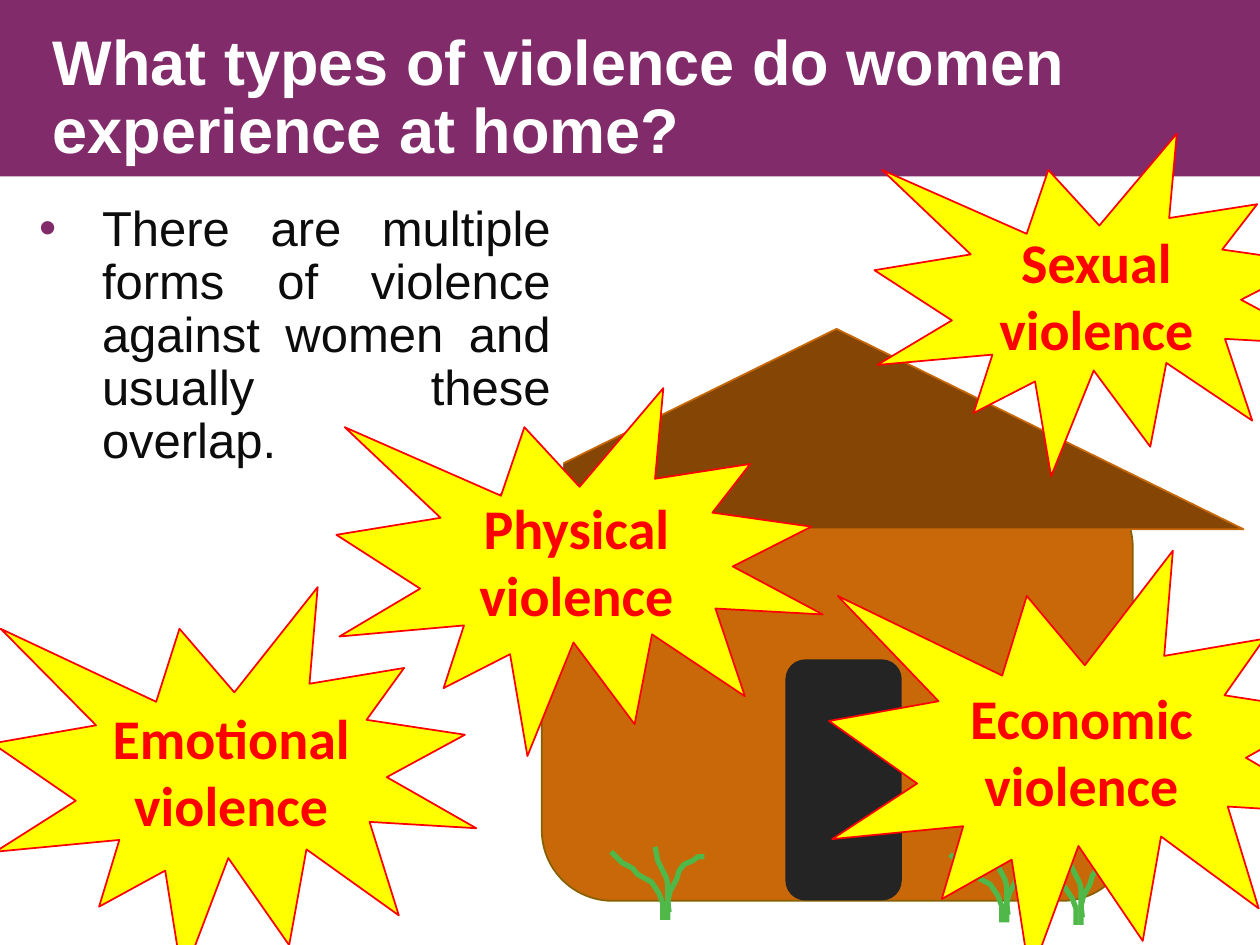
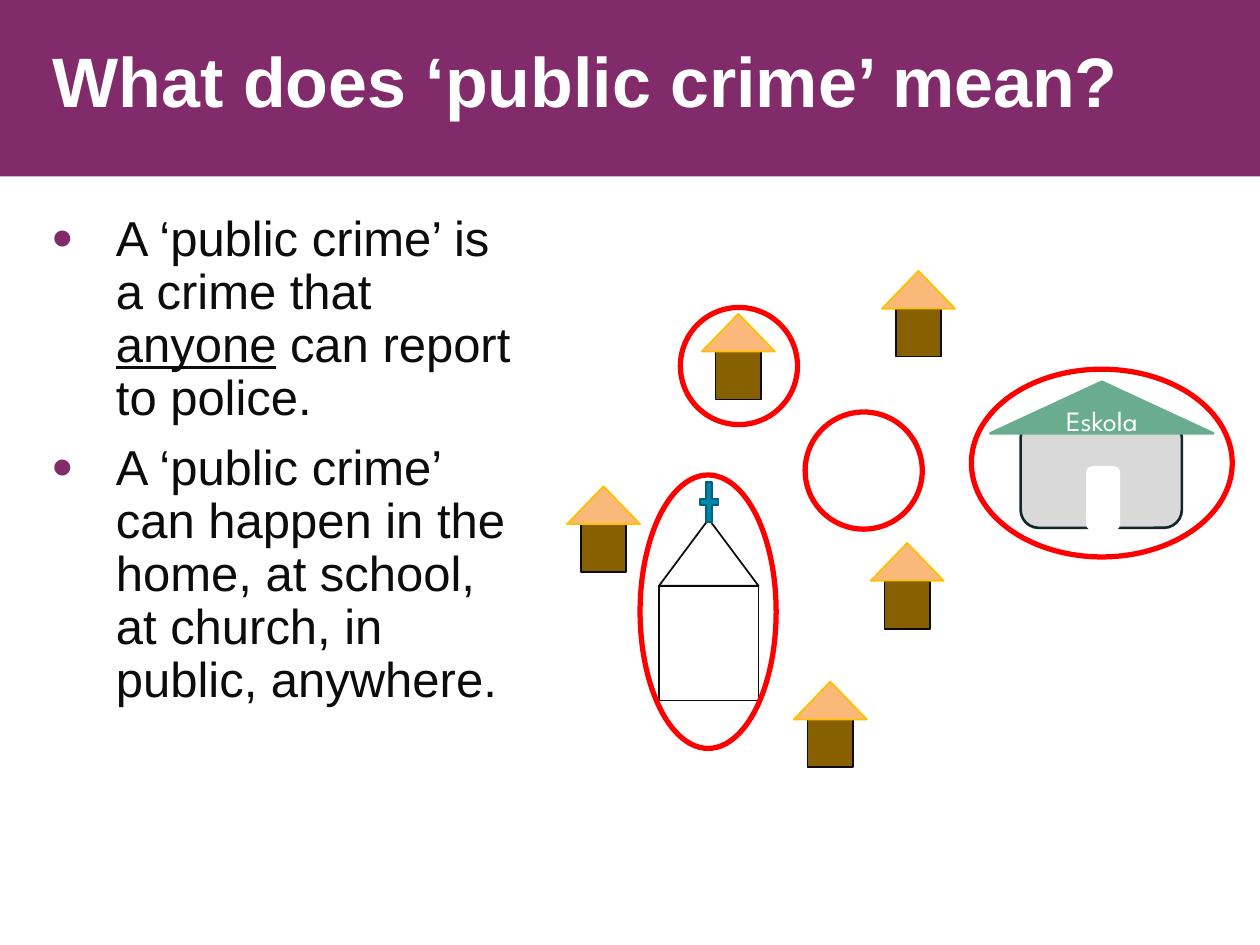
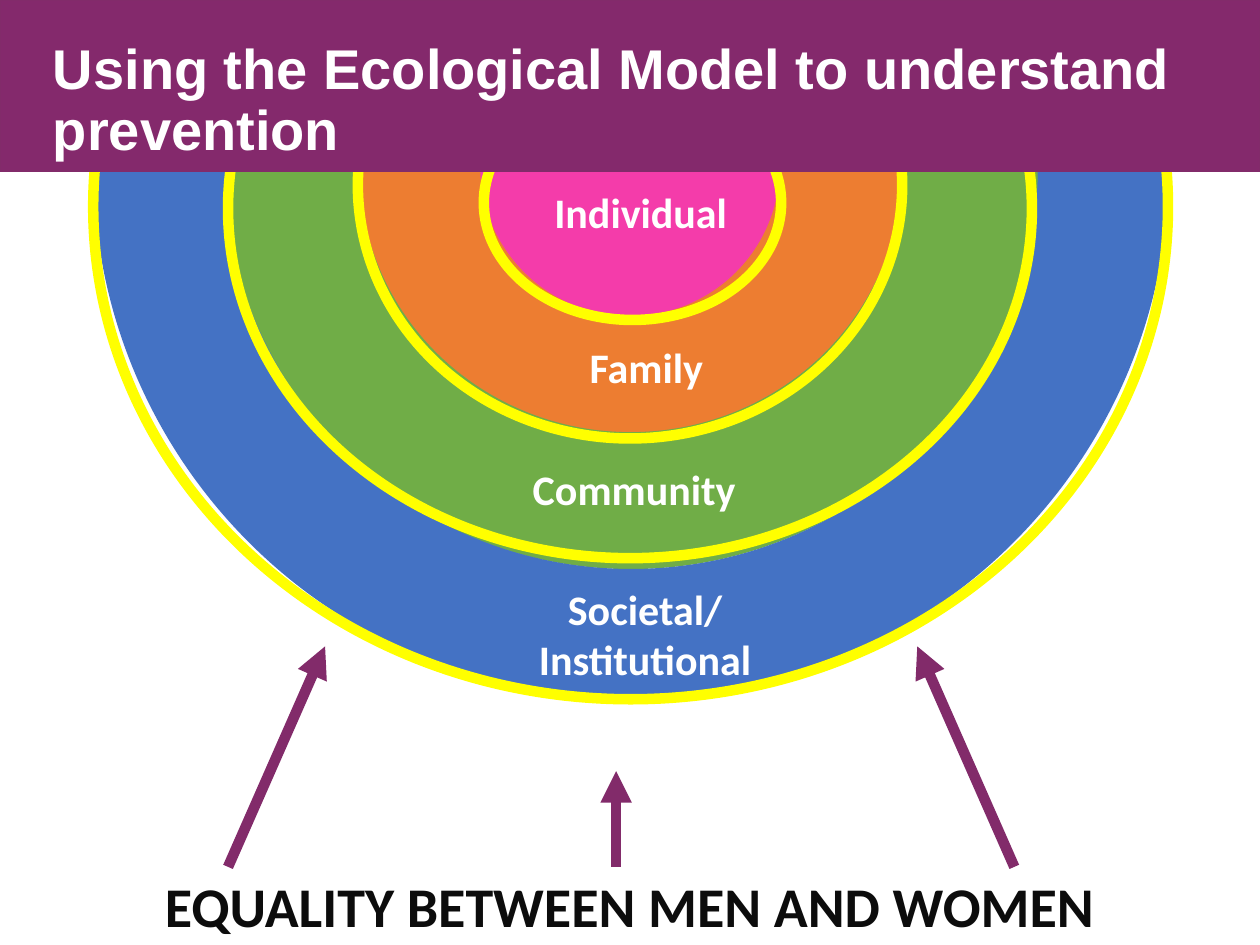
from lxml import etree
from pptx import Presentation
from pptx.dml.color import RGBColor
from pptx.enum.shapes import MSO_CONNECTOR, MSO_SHAPE
from pptx.enum.text import MSO_ANCHOR, MSO_AUTO_SIZE, PP_ALIGN
from pptx.oxml.ns import qn
from pptx.util import Emu, Pt

# Shared scale, colours and text formats
PX = 9144  # 100 px to the inch
PURPLE, WHITE, INK = "822B6A", "FFFFFF", "0C0C0C"
RED, YELLOW, GREEN, BROWN = "FF0000", "FFFF00", "50B848", "876001"

TITLE_FONT = {"name": "Arial", "bold": True, "color": WHITE}
BODY_FONT = {"name": "Arial", "size": 28, "color": INK}
SEAL_FONT = {"name": "Calibri", "size": 32, "bold": True, "color": RED}
RING_FONT = {"name": "Calibri", "size": 24, "bold": True, "color": WHITE}
BANNER_FONT = {"name": "Calibri", "size": 32, "bold": True, "color": INK}
SCHOOL_FONT = {"name": "League Spartan", "size": 16, "color": WHITE}

# Stems of one plant, as points from its top left corner
PLANT_STEMS = [
    [(0, 4), (9, 13), (17, 17), (21, 22), (32, 28), (38, 37), (41, 45), (41, 58)],
    [(46, 52), (45, 43), (47, 35), (52, 26), (54, 19), (58, 14), (65, 11),
     (69, 8), (74, 8)],
    [(35, 0), (37, 11), (41, 19), (44, 25), (45, 30), (45, 58)],
]


def px(n):
    return Emu(round(n * PX))


def rgb(color):
    return RGBColor.from_string(color)


def set_attrs(obj, values):
    for name, value in values.items():
        setattr(obj, name, value)


def place(sp, box):
    set_attrs(sp, dict(zip(("left", "top", "width", "height"), map(px, box))))


def to_front(sp):
    sp.element.getparent().append(sp.element)


def paint(sp, fill=None, line=None, weight=1):
    if fill:
        sp.fill.solid()
        sp.fill.fore_color.rgb = rgb(fill)
    else:
        sp.fill.background()
    if line:
        sp.line.color.rgb = rgb(line)
        sp.line.width = Pt(weight)
    else:
        sp.line.fill.background()


def add_bullet(p, percent):
    """Purple round bullet with a hanging indent."""
    pPr = p._p.get_or_add_pPr()
    pPr.set("marL", str(px(50)))
    pPr.set("indent", str(px(-50)))
    color = etree.SubElement(pPr, qn("a:buClr"))
    etree.SubElement(color, qn("a:srgbClr"), val=PURPLE)
    etree.SubElement(pPr, qn("a:buSzPct"), val=str(percent * 1000))
    etree.SubElement(pPr, qn("a:buFont"), typeface="Arial")
    etree.SubElement(pPr, qn("a:buChar"), char="•")


def write(sp, paragraphs, font, align=PP_ALIGN.LEFT, anchor=MSO_ANCHOR.TOP,
          spacing=1.0, bullet=None):
    """Fill a shape with text; words between underscores are underlined."""
    tf = sp.text_frame
    set_attrs(tf, {"word_wrap": True, "auto_size": MSO_AUTO_SIZE.NONE,
                   "vertical_anchor": anchor})
    for i, text in enumerate(paragraphs):
        p = tf.add_paragraph() if i else tf.paragraphs[0]
        set_attrs(p, {"alignment": align, "line_spacing": spacing,
                      "space_before": Pt(10 if i and bullet else 0)})
        if bullet:
            add_bullet(p, bullet)
        for j, part in enumerate(text.split("_")):
            r = p.add_run()
            r.text = part
            values = {**font, "size": Pt(font["size"])}
            r.font.color.rgb = rgb(values.pop("color"))
            set_attrs(r.font, values)
            if j % 2:
                r.font.underline = True


def add_shape(shapes, kind, box, fill=None, line=None, weight=1):
    sp = shapes.add_shape(kind, *map(px, box))
    sp.shadow.inherit = False
    paint(sp, fill, line, weight)
    return sp


def add_header(s, text, size, top, spacing=0.9, height=140, fill=PURPLE, line=None):
    add_shape(s.shapes, MSO_SHAPE.RECTANGLE, (0, 0, 1000, height), fill, line)
    title = s.shapes.title
    place(title, (32, top, 930, 68))
    write(title, [text], {**TITLE_FONT, "size": size}, spacing=spacing)
    to_front(title)


def add_list(s, box, items, bullet, align=PP_ALIGN.LEFT):
    body = s.placeholders[1]
    place(body, box)
    write(body, items, BODY_FONT, align, spacing=0.9, bullet=bullet)
    to_front(body)
    return body


def add_label(s, box, lines, align=PP_ALIGN.CENTER):
    write(s.shapes.add_textbox(*map(px, box)), lines, RING_FONT, align)


def add_seal(s, text, box):
    sp = add_shape(s.shapes, MSO_SHAPE.EXPLOSION1, box, YELLOW, RED)
    write(sp, [text], SEAL_FONT, PP_ALIGN.CENTER, MSO_ANCHOR.MIDDLE)


def add_plant(s, x, y):
    for stem in PLANT_STEMS:
        points = [(x + dx, y + dy) for dx, dy in stem]
        builder = s.shapes.build_freeform(*points[0], scale=PX)
        builder.add_line_segments(points[1:], close=False)
        sp = builder.convert_to_shape()
        sp.shadow.inherit = False
        paint(sp, None, GREEN, 3)


def add_house(s, x, y):
    shapes = s.shapes.add_group_shape().shapes
    add_shape(shapes, MSO_SHAPE.RECTANGLE, (x + 11, y + 30, 36, 38), BROWN, INK)
    add_shape(shapes, MSO_SHAPE.ISOSCELES_TRIANGLE, (x, y, 58, 30), "FAB979", "FFC000")


def add_school(s):
    shapes = s.shapes.add_group_shape().shapes
    wall = MSO_SHAPE.ROUNDED_RECTANGLE
    add_shape(shapes, wall, (810, 333, 128, 86), "D9D9D9", "0F282A", 1.5)
    add_shape(shapes, wall, (863, 371, 25, 49), WHITE, WHITE, 1.5)
    roof = add_shape(shapes, MSO_SHAPE.ISOSCELES_TRIANGLE, (786, 303, 177, 41),
                     "6AAC90", "6AAC90", 1.5)
    write(roof, ["Eskola"], SCHOOL_FONT, PP_ALIGN.CENTER, MSO_ANCHOR.MIDDLE)


def add_church(s):
    shapes = s.shapes.add_group_shape().shapes
    add_shape(shapes, MSO_SHAPE.RECTANGLE, (523, 465, 79, 91), None, INK)
    add_shape(shapes, MSO_SHAPE.ISOSCELES_TRIANGLE, (523, 412, 79, 53), WHITE, INK)
    add_shape(shapes, MSO_SHAPE.MATH_PLUS, (553, 377, 20, 43), "0084A8", "00627C")


def add_half_ring(shapes, box, color, thickness=None):
    """Lower half of a ring, or of a full disc without a thickness."""
    kind = MSO_SHAPE.BLOCK_ARC if thickness else MSO_SHAPE.PIE
    sp = add_shape(shapes, kind, box, color, color)
    sp.adjustments[0], sp.adjustments[1] = 0, 108
    if thickness:
        sp.adjustments[2] = thickness


def add_arrow(s, x1, y1, x2, y2):
    line = s.shapes.add_connector(MSO_CONNECTOR.STRAIGHT, *map(px, (x1, y1, x2, y2)))
    line.line.color.rgb = rgb(PURPLE)
    line.line.width = Pt(6)
    etree.SubElement(line.line._get_or_add_ln(), qn("a:tailEnd"), type="triangle")
    etree.SubElement(line.element.spPr, qn("a:effectLst"))


def violence_slide(s):
    add_header(s, "What types of violence do women experience at home?", 36, 20)
    # House with plants
    wall = MSO_SHAPE.ROUNDED_RECTANGLE
    add_shape(s.shapes, wall, (430, 378, 469, 337), "C86808", BROWN)
    add_shape(s.shapes, MSO_SHAPE.ISOSCELES_TRIANGLE, (341, 261, 646, 159),
              "854605", "C86808")
    add_shape(s.shapes, wall, (624, 524, 91, 190), "242424", "242424")
    for x, y in [(485, 672), (754, 674), (813, 676)]:
        add_plant(s, x, y)
    # Kinds of violence around the list
    add_seal(s, "Sexual violence", (694, 106, 357, 272))
    add_seal(s, "Emotional violence", (-6, 466, 384, 311))
    add_seal(s, "Economic violence", (658, 437, 406, 339))
    body = add_list(s, (21, 157, 426, 222), [
        "There are multiple forms of violence against women and usually these overlap.",
    ], 100, PP_ALIGN.JUSTIFY)
    paint(body, WHITE)
    add_seal(s, "Physical violence", (267, 308, 386, 292))


def public_crime_slide(s):
    add_header(s, "What does ‘public crime’ mean?", 40, 38, spacing=0.8)
    add_list(s, (32, 165, 384, 494), [
        "A ‘public crime’ is a crime that _anyone_ can report to police.",
        "A ‘public crime’ can happen in the home, at school, at church, "
        "in public, anywhere.",
    ], 120)
    # Village
    for x, y in [(630, 541), (450, 386), (557, 249), (691, 431), (700, 215)]:
        add_house(s, x, y)
    add_school(s)
    add_church(s)
    # Places where a crime can happen
    for box in [(540, 244, 93, 93), (508, 377, 108, 217),
                (639, 327, 93, 93), (771, 293, 207, 149)]:
        add_shape(s.shapes, MSO_SHAPE.OVAL, box, None, RED, 3)


def ecological_slide(s):
    ground = add_shape(s.shapes, MSO_SHAPE.RECTANGLE, (0, 136, 1000, 614), WHITE, WHITE)
    write(ground, ["EQUALITY BETWEEN MEN AND WOMEN"], BANNER_FONT,
          PP_ALIGN.CENTER, MSO_ANCHOR.BOTTOM)
    # Half rings and their outlines
    rings = s.shapes.add_group_shape().shapes
    add_half_ring(rings, (374, 12, 246, 246), "F43CAA")
    add_half_ring(rings, (284, -84, 432, 432), "ED7D31", 0.223)
    add_half_ring(rings, (177, -184, 647, 635), "70AD47", 0.169)
    add_half_ring(rings, (75, -287, 852, 842), "4472C4", 0.122)
    for box in [(384, 68, 236, 186), (284, -54, 432, 402),
                (181, -112, 638, 555), (74, -227, 853, 782)]:
        add_shape(s.shapes, MSO_SHAPE.OVAL, box, None, YELLOW, 6)
    add_header(s, "Using the Ecological Model to understand prevention", 32, 28,
               height=136, fill="84296C", line=PURPLE)
    # Ring names
    add_label(s, (399, 143, 219, 50), ["Individual"])
    add_label(s, (414, 266, 198, 50), ["Family"])
    add_label(s, (413, 363, 203, 50), ["Community"], PP_ALIGN.LEFT)
    add_label(s, (399, 458, 226, 91), ["Societal/", "Institutional"])
    # Arrows from equality to the rings
    for x1, x2, y2 in [(805, 728, 513), (181, 258, 513), (489, 489, 612)]:
        add_arrow(s, x1, 688, x2, y2)


def main():
    prs = Presentation()
    prs.slide_width, prs.slide_height = px(1000), px(750)
    list_layout, title_layout = prs.slide_layouts[1], prs.slide_layouts[5]
    for layout, build in [(list_layout, violence_slide),
                          (list_layout, public_crime_slide),
                          (title_layout, ecological_slide)]:
        build(prs.slides.add_slide(layout))
    prs.save("out.pptx")


if __name__ == "__main__":
    main()
